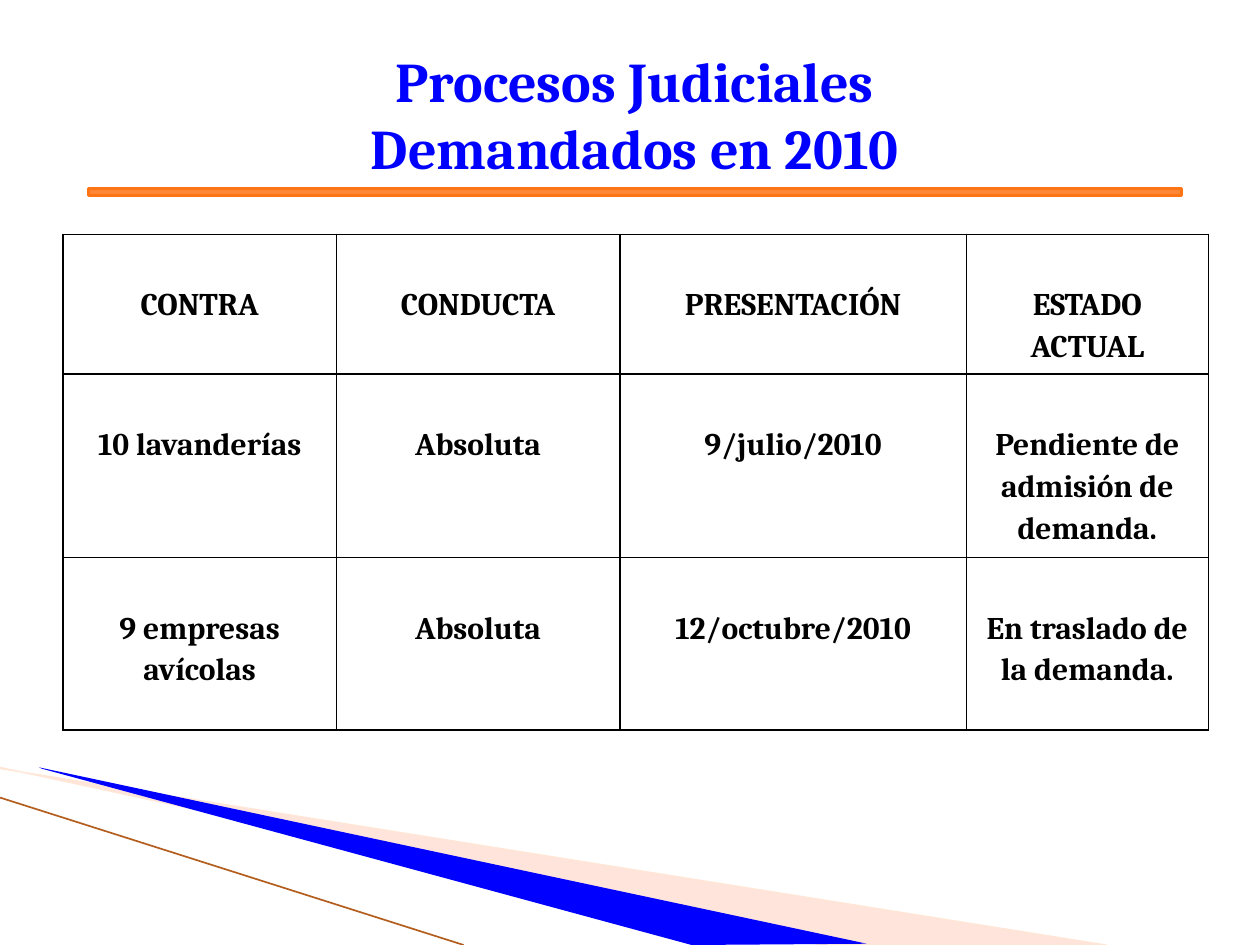
from dataclasses import dataclass

from lxml.etree import SubElement
from pptx import Presentation
from pptx.dml.color import RGBColor
from pptx.enum.shapes import MSO_CONNECTOR, MSO_SHAPE
from pptx.enum.text import MSO_ANCHOR, PP_ALIGN
from pptx.oxml import parse_xml
from pptx.oxml.ns import nsdecls, qn
from pptx.util import Inches, Pt


@dataclass(frozen=True)
class Theme:
    """Colours, font and type sizes."""
    font: str = "Cambria"
    blue: str = "0000FF"
    ink: str = "000000"
    bar: str = "FE8637"
    edge: str = "FF7415"
    peach: str = "FFBCA5"
    pale: str = "FFE7D7"
    brown: str = "B35E1E"
    head: int = 32
    body: int = 18


THEME = Theme()
ROWS = [
    ["CONTRA", "CONDUCTA", "PRESENTACIÓN", "ESTADO ACTUAL"],
    ["10 lavanderías", "Absoluta", "9/julio/2010",
     "Pendiente de admisión de demanda."],
    ["9 empresas avícolas", "Absoluta", "12/octubre/2010",
     "En traslado de la demanda."],
]
WIDTHS = [2.17, 2.25, 2.75, 1.92]
HEIGHTS = [1.05, 1.38, 1.37]


def paint(fill, color):
    """Fill with one solid colour."""
    fill.solid()
    fill.fore_color.rgb = RGBColor.from_string(color)


def style(para, size, color):
    """Centre a paragraph and set its bold font."""
    para.alignment = PP_ALIGN.CENTER
    font = para.font
    font.name, font.size, font.bold = THEME.font, Pt(size), True
    font.color.rgb = RGBColor.from_string(color)


def add_wedge(slide, points, color):
    """Draw a closed wedge through points in inches."""
    spots = [(Inches(x), Inches(y)) for x, y in points]
    pen = slide.shapes.build_freeform(*spots[0])
    pen.add_line_segments(spots[1:], close=True)
    wedge = pen.convert_to_shape()
    wedge.shadow.inherit = False
    paint(wedge.fill, color)
    wedge.line.fill.background()
    return wedge


def add_rays(slide, left, top, width, height):
    """Draw the wedges and thin line at the foot of the slide."""
    base = top + height
    back = add_wedge(slide, [(left, top + 0.01), (left + width, base),
                             (left + 6.52, base), (left, top)], THEME.peach)
    tint = back.fill._xPr.find(qn("a:solidFill"))[0]
    SubElement(tint, qn("a:alpha"), val="40000")
    paint(back.line.fill, THEME.pale)
    back.line.width = Pt(0.75)
    add_wedge(slide, [(left + 0.31, top), (left + 6.88, base - 0.01),
                      (left + 5.49, base), (left + 0.33, top + 0.01)],
              THEME.blue)
    ray = slide.shapes.add_connector(
        MSO_CONNECTOR.STRAIGHT, Inches(left), Inches(top + 0.24),
        Inches(left + 3.68), Inches(base))
    paint(ray.line.fill, THEME.brown)
    ray.line.width = Pt(0.95)
    SubElement(ray._element.spPr, qn("a:effectLst"))


def add_bar(slide, left, top, width, height):
    """Draw the orange rule under the title."""
    bar = slide.shapes.add_shape(MSO_SHAPE.MATH_MINUS, Inches(left),
                                 Inches(top), Inches(width), Inches(height))
    bar.shadow.inherit = False
    paint(bar.fill, THEME.bar)
    paint(bar.line.fill, THEME.edge)
    bar.line.width = Pt(2)


def add_title(slide, left, top, width, height):
    """Place the two-line title."""
    box = slide.shapes.add_textbox(Inches(left), Inches(top),
                                   Inches(width), Inches(height))
    frame = box.text_frame
    frame.word_wrap = True
    frame.vertical_anchor = MSO_ANCHOR.MIDDLE
    para = frame.paragraphs[0]
    para.text = "Procesos Judiciales\vDemandados en 2010"
    style(para, THEME.head, THEME.blue)


def add_edges(cell):
    """Give a cell thin borders on all sides."""
    props = cell._tc.get_or_add_tcPr()
    for spot, side in enumerate("LRTB"):
        props.insert(spot, parse_xml(
            f'<a:ln{side} {nsdecls("a")} w="12700"><a:solidFill>'
            f'<a:srgbClr val="{THEME.ink}"/></a:solidFill></a:ln{side}>'))


def add_cases(slide, left, top, width, height):
    """Place the table of court cases."""
    table = slide.shapes.add_table(
        len(ROWS), len(WIDTHS), Inches(left), Inches(top),
        Inches(width), Inches(height)).table
    table.first_row = table.horz_banding = False
    for col, size in zip(table.columns, WIDTHS):
        col.width = Inches(size)
    for row, size, texts in zip(table.rows, HEIGHTS, ROWS):
        row.height = Inches(size)
        for cell, text in zip(row.cells, texts):
            cell.fill.background()
            add_edges(cell)
            cell.margin_top, cell.margin_bottom = Inches(0.38), Inches(0.04)
            para = cell.text_frame.paragraphs[0]
            para.text = text
            para.line_spacing = 1.15
            style(para, THEME.body, THEME.ink)


def main():
    """Build and save the slide."""
    deck = Presentation()
    deck.slide_width, deck.slide_height = Inches(10), Inches(7.5)
    slide = deck.slides.add_slide(deck.slide_layouts[6])
    add_rays(slide, 0, 6.09, 8.78, 1.41)
    add_bar(slide, -0.86, 1.41, 11.8, 0.23)
    add_title(slide, 0.75, 0.36, 8.58, 1.08)
    add_cases(slide, 0.5, 1.86, sum(WIDTHS), sum(HEIGHTS))
    deck.save("out.pptx")


if __name__ == "__main__":
    main()
